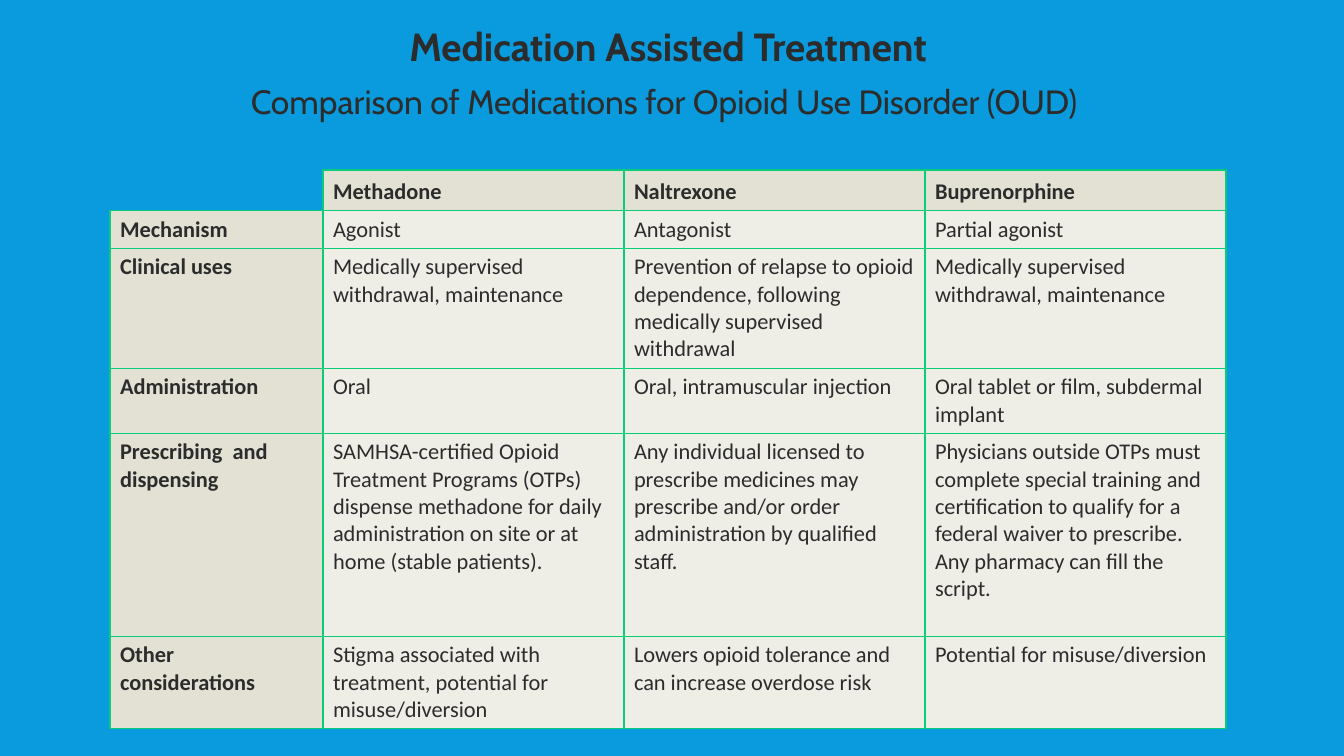
from lxml import etree
from pptx import Presentation
from pptx import util as u
from pptx.dml.color import RGBColor
from pptx.enum import text
from pptx.oxml import ns

SCALE = 9072  # EMU in one px
INK, BLUE, GREEN = "2C2C2C", "099BDD", "08CC78"
LABEL, BODY = "E2E1D4", "EEEDE6"
NO_STYLE = "{2D5ABB26-0587-4C30-8999-92F81FD0307C}"

COLS = [213, 301, 301, 301]
ROWS = [58, 93, 40, 37, 120, 65, 203, 92]
TITLES = [
    ("Medication Assisted Treatment", 28, True, 10),
    ("Comparison of Medications for Opioid Use Disorder (OUD)", 24, False, 18),
]
DRUGS = [
    ["", "Methadone", "Naltrexone", "Buprenorphine"],
    ["Mechanism", "Agonist", "Antagonist", "Partial agonist"],
    ["Clinical uses",
     "Medically supervised withdrawal, maintenance",
     "Prevention of relapse to opioid dependence, following medically supervised withdrawal",
     "Medically supervised withdrawal, maintenance"],
    ["Administration", "Oral", "Oral, intramuscular injection",
     "Oral tablet or film, subdermal implant"],
    ["Prescribing  and dispensing",
     "SAMHSA-certified Opioid Treatment Programs (OTPs) dispense methadone for daily "
     "administration on site or at home (stable patients).",
     "Any individual licensed to prescribe medicines may prescribe and/or order "
     "administration by qualified staff.",
     "Physicians outside OTPs must complete special training and certification to qualify "
     "for a federal waiver to prescribe. Any pharmacy can fill the script."],
    ["Other considerations",
     "Stigma associated with treatment, potential for misuse/diversion",
     "Lowers opioid tolerance and can increase overdose risk",
     "Potential for misuse/diversion"],
]


def px(n):
    return u.Emu(n * SCALE)


def rgb(code):
    return RGBColor.from_string(code)


def write(cell, words, font, size, bold):
    para = cell.text_frame.paragraphs[0]
    para.text = words
    for run in para.runs:
        run.font.name, run.font.size, run.font.bold = font, u.Pt(size), bold
        run.font.color.rgb = rgb(INK)
    return para


def border(cell, sides):
    props = cell._tc.get_or_add_tcPr()
    for spot, side in enumerate(sides):
        line = etree.Element(ns.qn("a:ln" + side), w=str(u.Pt(1)))
        fill = etree.SubElement(line, ns.qn("a:solidFill"))
        etree.SubElement(fill, ns.qn("a:srgbClr"), val=GREEN)
        props.insert(spot, line)


def add_titles(table):
    for row, (words, size, bold, right) in enumerate(TITLES):
        cell = table.cell(row, 0)
        cell.merge(table.cell(row, len(COLS) - 1))
        cell.margin_right = px(right)
        para = write(cell, words, "Cabin", size, bold)
        para.alignment = text.PP_ALIGN.CENTER


def add_drugs(table):
    for row, line in enumerate(DRUGS):
        for col, words in enumerate(line):
            cell = table.cell(row + len(TITLES), col)
            head = row == 0 or col == 0
            write(cell, words, "Calibri", 16, head)
            if row == 0:
                cell.vertical_anchor = text.MSO_ANCHOR.BOTTOM
            if words:
                cell.fill.solid()
                cell.fill.fore_color.rgb = rgb(LABEL if head else BODY)
            border(cell, "LRTB" if words else "RB")


def add_grid(slide, left, top):
    frame = slide.shapes.add_table(len(ROWS), len(COLS), px(left), px(top),
                                   px(sum(COLS)), px(sum(ROWS)))
    table = frame.table
    table.first_row = table.horz_banding = False
    table._tbl.tblPr.find(ns.qn("a:tableStyleId")).text = NO_STYLE
    for col, wide in zip(table.columns, COLS):
        col.width = px(wide)
    for row, high in zip(table.rows, ROWS):
        row.height = px(high)
    add_titles(table)
    add_drugs(table)


def main():
    deck = Presentation()
    deck.slide_width, deck.slide_height = px(1344), px(756)
    slide = deck.slides.add_slide(deck.slide_layouts[6])
    slide.background.fill.solid()
    slide.background.fill.fore_color.rgb = rgb(BLUE)
    add_grid(slide, 110, 19)
    deck.save("out.pptx")


if __name__ == "__main__":
    main()
